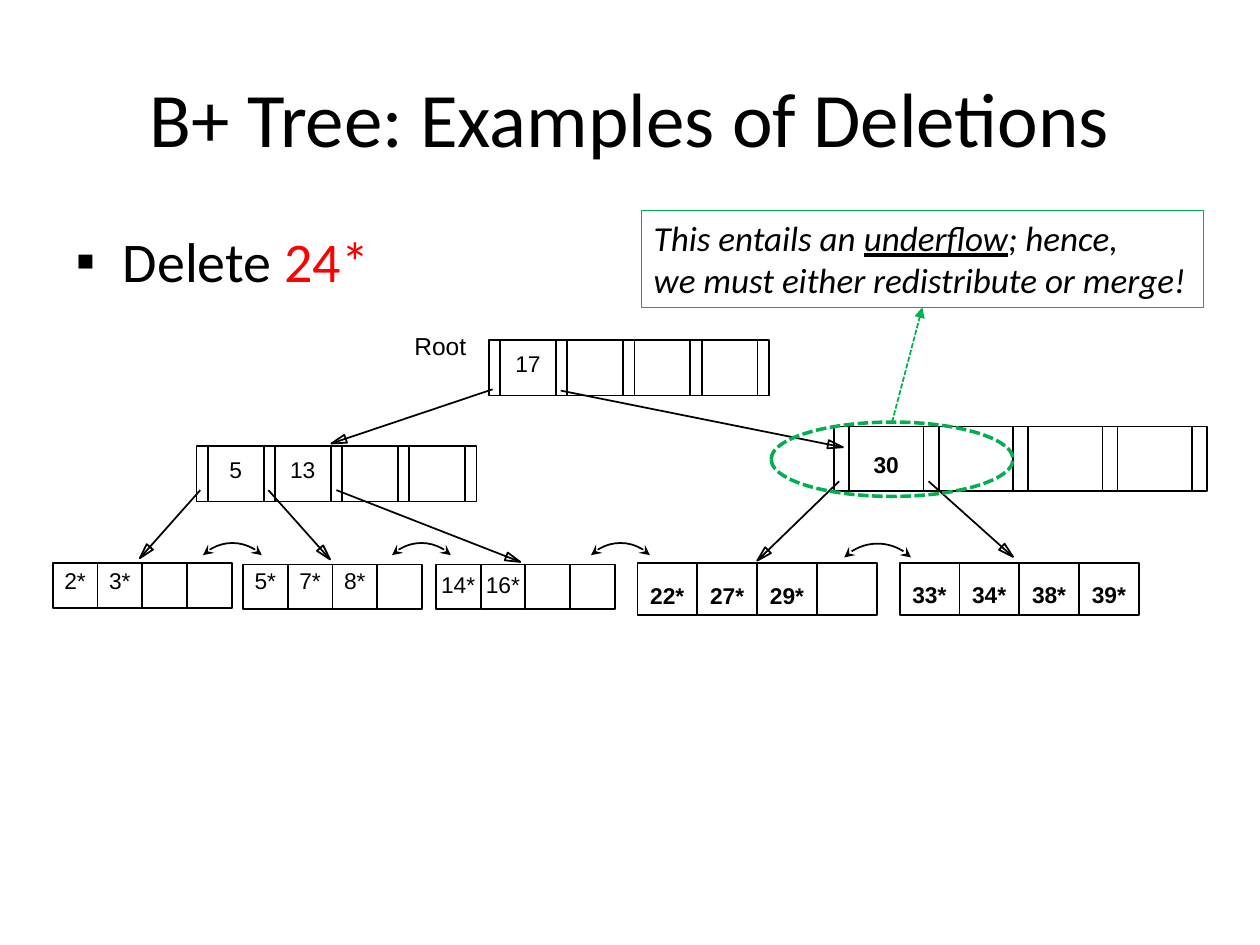
from math import hypot

from lxml.etree import SubElement
from pptx import Presentation
from pptx.dml.color import RGBColor
from pptx.enum.dml import MSO_LINE as Dash
from pptx.enum.shapes import MSO_CONNECTOR as Link, MSO_SHAPE as Preset
from pptx.enum.text import MSO_ANCHOR as Anchor, MSO_AUTO_SIZE as AutoSize, PP_ALIGN as Align
from pptx.oxml.ns import qn
from pptx.util import Inches, Pt

BLACK = RGBColor(0x00, 0x00, 0x00)
RED = RGBColor(0xFF, 0x00, 0x00)
GREEN = RGBColor(0x00, 0xB0, 0x50)
COLUMNS, ROWS = 100, 75


class TreeSlide:
    """Draws B+ tree parts on a slide divided into 100 columns and 75 rows."""

    key_font, text_font = "Arial", "Calibri"

    def __init__(self, deck):
        self.slide = deck.slides.add_slide(deck.slide_layouts[1])
        self.shapes = self.slide.shapes
        self.column = deck.slide_width / COLUMNS
        self.row = deck.slide_height / ROWS

    def grid(self, *lengths):
        units = (self.column, self.row)
        return [round(length * units[i % 2]) for i, length in enumerate(lengths)]

    def style(self, paragraph, size, name, color=BLACK, bold=None, italic=None):
        font = paragraph.font
        font.size, font.name, font.bold, font.italic = Pt(size), name, bold, italic
        font.color.rgb = color

    def stroke(self, shape, color=BLACK, width=1, dash=None, ends=()):
        shape.line.color.rgb = color
        shape.line.width = Pt(width)
        if dash:
            shape.line.dash_style = dash
        properties = shape.element.spPr
        for tag, kind in ends:
            SubElement(properties.find(qn("a:ln")), qn(tag), type=kind)
        if properties.find(qn("a:effectLst")) is None:
            SubElement(properties, qn("a:effectLst"))

    def place(self, holder, *box):
        holder.left, holder.top, holder.width, holder.height = self.grid(*box)
        return holder.text_frame

    def title(self, words, *box):
        frame = self.place(self.shapes.title, *box)
        frame.text, frame.vertical_anchor = words, Anchor.MIDDLE
        frame.paragraphs[0].alignment = Align.CENTER
        self.style(frame.paragraphs[0], 44, self.text_font)

    def task(self, action, key, *box):
        item = self.place(self.slide.placeholders[1], *box).paragraphs[0]
        item.add_run().text = action
        target = item.add_run()
        target.text, target.font.color.rgb = key, RED
        self.style(item, 32, self.text_font)
        properties = item._p.get_or_add_pPr()
        bullet_font = SubElement(properties, qn("a:buFont"))
        bullet_font.set("typeface", self.key_font)
        SubElement(properties, qn("a:buChar"), char="▪")

    def outline(self, preset, *box, **stroke):
        shape = self.shapes.add_shape(preset, *self.grid(*box))
        shape.shadow.inherit = False
        shape.fill.background()
        self.stroke(shape, **stroke)
        return shape

    def label(self, words, center, top, width, size=13, bold=None):
        box = self.shapes.add_textbox(*self.grid(center - width / 2, top, width, 3.2))
        box.text_frame.word_wrap = False
        box.text_frame.auto_size = AutoSize.SHAPE_TO_FIT_TEXT
        box.text_frame.text = words
        self.style(box.text_frame.paragraphs[0], size, self.key_font, bold=bold)

    def keys(self, keys, first_center, step, top, bold):
        for i, key in enumerate(keys):
            width = 2 + len(key) - 0.3 * key.count("*")
            self.label(key, first_center + i * step, top, width, bold=bold)

    def leaf(self, keys, left, top, width, height, drop, bold=None):
        for i in range(4):
            self.outline(Preset.RECTANGLE, left + i * width, top, width, height)
        self.keys(keys, left + width / 2, width, top + drop, bold)

    def inner(self, keys, left, top, width, height, pointer, drop, bold=None):
        for i in range(4):
            start = left + i * width
            self.outline(Preset.RECTANGLE, start, top, width, height)
            self.line(start + pointer, top, start + pointer, top + height)
        self.outline(Preset.RECTANGLE, left + 4 * width, top, pointer, height)
        self.keys(keys, left + (width + pointer) / 2, width, top + drop, bold)

    def line(self, *ends):
        link = self.shapes.add_connector(Link.STRAIGHT, *self.grid(*ends))
        self.stroke(link)

    def child(self, x1, y1, x2, y2, length=1.2, half=0.33):
        self.line(x1, y1, x2, y2)
        reach = hypot(x2 - x1, y2 - y1)
        dx, dy = (x2 - x1) / reach, (y2 - y1) / reach
        base_x, base_y = x2 - length * dx, y2 - length * dy
        corners = [(base_x + side * dy, base_y - side * dx) for side in (half, -half)]
        head = self.shapes.build_freeform(*self.grid(x2, y2))
        head.add_line_segments([self.grid(*corner) for corner in corners])
        arrow = head.convert_to_shape()
        arrow.fill.background()
        self.stroke(arrow)

    def siblings(self, center, middle, radius):
        arc = self.outline(
            Preset.ARC, center - radius, middle - radius, 2 * radius, 2 * radius,
            ends=[("a:headEnd", "stealth"), ("a:tailEnd", "stealth")])
        for i, degrees in enumerate((225, 315)):
            arc.adjustments[i] = degrees * 0.6

    def callout(self, lines, *box):
        note = self.outline(Preset.RECTANGLE, *box, color=GREEN, width=0.75)
        frame = note.text_frame
        frame.word_wrap, frame.vertical_anchor = False, Anchor.TOP
        frame.auto_size = AutoSize.SHAPE_TO_FIT_TEXT
        for i, pieces in enumerate(lines):
            sentence = frame.add_paragraph() if i else frame.paragraphs[0]
            sentence.alignment = Align.LEFT
            self.style(sentence, 20, self.text_font, italic=True)
            for words, underlined in pieces:
                run = sentence.add_run()
                run.text, run.font.underline = words, underlined
        return note

    def pointer(self, source, target):
        link = self.shapes.add_connector(Link.STRAIGHT, 0, 0, 0, 0)
        link.begin_connect(source, 0)
        link.end_connect(target, 2)
        self.stroke(link, GREEN, 1, Dash.SQUARE_DOT, [("a:tailEnd", "triangle")])


def main():
    deck = Presentation()
    deck.slide_width, deck.slide_height = Inches(10), Inches(7.5)
    tree = TreeSlide(deck)
    tree.title("B+ Tree: Examples of Deletions", 5, 3, 90, 12.5)
    tree.task("Delete ", "24*", 5, 17.5, 90, 54.2)

    tree.label("Root", 35.1, 25.8, 6.4, size=14)
    tree.inner(["17"], 38.8, 27, 5.33, 4.4, 0.9, 0.3)
    tree.inner(["5", "13"], 15.6, 35.4, 5.33, 4.4, 0.9, 0.3)
    tree.inner(["30"], 66.2, 33.85, 7.1, 5.15, 1.2, 1.4, bold=True)

    tree.leaf(["2*", "3*"], 4.2, 44.7, 3.55, 3.55, -0.2)
    tree.leaf(["5*", "7*", "8*"], 19.3, 44.8, 3.55, 3.55, -0.3)
    tree.leaf(["14*", "16*"], 34.6, 44.8, 3.55, 3.55, 0)
    tree.leaf(["22*", "27*", "29*"], 50.6, 44.7, 4.75, 4.1, 0.95, bold=True)
    tree.leaf(["33*", "34*", "38*", "39*"], 71.4, 44.7, 4.75, 4.1, 0.9, bold=True)

    for ends in [
        (39.1, 30.9, 26.3, 35.2), (44.5, 31, 66.9, 35.5),
        (15.9, 38.9, 11.1, 44.3), (21.3, 38.9, 26.2, 44.4), (26.7, 38.9, 41.3, 44.6),
        (66.6, 38.2, 60.1, 44.5), (73.7, 38.2, 80.4, 44.2),
    ]:
        tree.child(*ends)
    for center in (18.45, 33.45, 49.25):
        tree.siblings(center, 46.4, 3.3)
    tree.siblings(69.65, 46.9, 3.75)

    note = tree.callout([
        [("This entails an ", None), ("underflow", True), ("; hence,", None)],
        [("we must either redistribute or merge!", None)],
    ], 50.9, 16.7, 44.6, 7.7)
    underflow = tree.outline(Preset.OVAL, 61.2, 33.5, 19.2, 5.9,
                             color=GREEN, width=2, dash=Dash.SQUARE_DOT)
    tree.pointer(underflow, note)
    deck.save("out.pptx")


if __name__ == "__main__":
    main()
